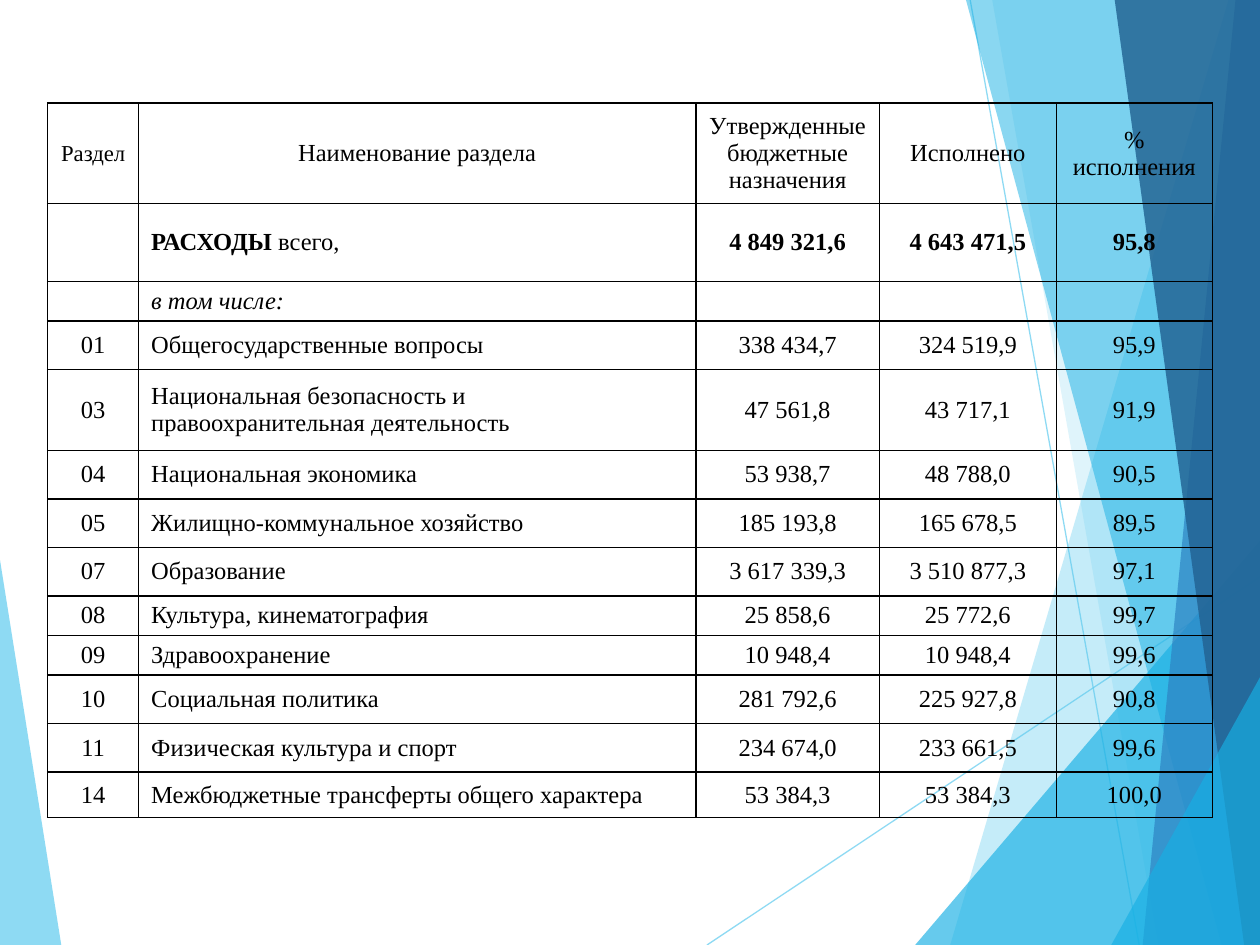
from dataclasses import dataclass

from lxml.etree import SubElement
from pptx import Presentation
from pptx.dml.color import RGBColor
from pptx.enum.shapes import MSO_CONNECTOR
from pptx.enum.text import MSO_ANCHOR, PP_ALIGN
from pptx.oxml import parse_xml
from pptx.oxml.ns import nsdecls, qn
from pptx.util import Pt


@dataclass(frozen=True)
class Theme:
    font: str = "Times New Roman"
    body: int = 14
    small: int = 13
    text: str = "000000"
    sky: str = "5FCBEF"
    cyan: str = "17B0E4"
    blue: str = "2E83C3"
    navy: str = "226292"


T = Theme()
W, H = 720, 540

# Points, colour, opacity in percent; back to front
FACETS = [
    ([(0, 320), (35.3, H), (0, H)], T.sky, 70),
    ([(702, 0), (543, H), (W, H), (W, 0)], T.sky, 36),
    ([(567.4, 0), (661.7, H), (W, H), (W, 0)], T.sky, 20),
    ([(522.7, H), (W, 309), (W, H)], T.cyan, 66),
    ([(552.2, 0), (698.4, H), (W, H), (W, 0)], T.cyan, 50),
    ([(706.3, 0), (653, H), (W, H), (W, 0)], T.blue, 70),
    ([(637.2, 0), (711.4, H), (W, H), (W, 0)], T.navy, 82),
    ([(635, H), (W, 387), (W, H)], T.cyan, 66),
]
RAYS = [((404, H), (W, 329.6)), ((554.4, 0), (651, H))]

TABLE_LEFT, TABLE_TOP = 27.2, 58.9
COLUMNS = [52, 318.4, 105, 101, 89.2]
REGULAR, LOW = 27.7, 22.5
ROWS = [
    (57.5, ["Раздел", "Наименование раздела", "Утвержденные бюджетные назначения",
            "Исполнено", "% исполнения"]),
    (44.4, ["", "РАСХОДЫ всего,", "4 849 321,6", "4 643 471,5", "95,8"]),
    (LOW, ["", "в том числе:", "", "", ""]),
    (REGULAR, ["01", "Общегосударственные вопросы", "338 434,7", "324 519,9", "95,9"]),
    (46.2, ["03", "Национальная безопасность и правоохранительная деятельность",
            "47 561,8", "43 717,1", "91,9"]),
    (REGULAR, ["04", "Национальная экономика", "53 938,7", "48 788,0", "90,5"]),
    (REGULAR, ["05", "Жилищно-коммунальное хозяйство", "185 193,8", "165 678,5", "89,5"]),
    (REGULAR, ["07", "Образование", "3 617 339,3", "3 510 877,3", "97,1"]),
    (LOW, ["08", "Культура, кинематография", "25 858,6", "25 772,6", "99,7"]),
    (LOW, ["09", "Здравоохранение", "10 948,4", "10 948,4", "99,6"]),
    (REGULAR, ["10", "Социальная политика", "281 792,6", "225 927,8", "90,8"]),
    (REGULAR, ["11", "Физическая культура и спорт", "234 674,0", "233 661,5", "99,6"]),
    (26, ["14", "Межбюджетные трансферты общего характера", "53 384,3", "53 384,3", "100,0"]),
]
HEADER, TOTAL, INCLUDING = range(3)
NAME_COLUMN = 1


def rgb(color):
    return RGBColor.from_string(color)


def set_opacity(element, percent):
    color = element.find(".//" + qn("a:srgbClr"))
    SubElement(color, qn("a:alpha")).set("val", str(percent * 1000))


def add_facet(s, points, color, opacity):
    start, *rest = points
    builder = s.shapes.build_freeform(*start, scale=Pt(1))
    builder.add_line_segments(rest, close=True)
    facet = builder.convert_to_shape()
    facet.shadow.inherit = False
    facet.fill.solid()
    facet.fill.fore_color.rgb = rgb(color)
    facet.line.fill.background()
    set_opacity(facet._element.spPr, opacity)


def add_ray(s, start, end):
    ray = s.shapes.add_connector(MSO_CONNECTOR.STRAIGHT, *map(Pt, start + end))
    ray.line.color.rgb = rgb(T.sky)
    ray.line.width = Pt(0.75)
    sp_pr = ray._element.spPr
    set_opacity(sp_pr, 70)
    SubElement(sp_pr, qn("a:effectLst"))


def set_borders(cell, width=1):
    tc_pr = cell._tc.get_or_add_tcPr()
    for position, side in enumerate(("lnL", "lnR", "lnT", "lnB")):
        tc_pr.insert(position, parse_xml(
            f'<a:{side} {nsdecls("a")} w="{Pt(width)}"><a:solidFill>'
            f'<a:srgbClr val="{T.text}"/></a:solidFill></a:{side}>'))


def format_cell(cell, row, column):
    cell.vertical_anchor = MSO_ANCHOR.MIDDLE
    cell.fill.background()
    set_borders(cell)
    p = cell.text_frame.paragraphs[0]
    is_name = column == NAME_COLUMN and row != HEADER
    p.alignment = PP_ALIGN.LEFT if is_name else PP_ALIGN.CENTER
    font = p.font
    font.name = T.font
    font.size = Pt(T.small if row == HEADER and column == 0 else T.body)
    font.color.rgb = rgb(T.text)
    font.bold = row == TOTAL and not is_name
    font.italic = row == INCLUDING


def write_cell(cell, text, row, column):
    p = cell.text_frame.paragraphs[0]
    if row == TOTAL and column == NAME_COLUMN:
        heading, rest = text.split(" ", 1)
        r = p.add_run()
        r.text = heading
        r.font.bold = True
        p.add_run().text = " " + rest
    elif text:
        p.add_run().text = text
    format_cell(cell, row, column)


def add_budget_table(s):
    heights = [height for height, _ in ROWS]
    table = s.shapes.add_table(
        len(ROWS), len(COLUMNS), Pt(TABLE_LEFT), Pt(TABLE_TOP),
        Pt(sum(COLUMNS)), Pt(sum(heights))).table
    table.first_row = table.horz_banding = False
    for column, width in zip(table.columns, COLUMNS):
        column.width = Pt(width)
    for i, (height, texts) in enumerate(ROWS):
        table.rows[i].height = Pt(height)
        for j, text in enumerate(texts):
            write_cell(table.cell(i, j), text, i, j)


def main():
    prs = Presentation()
    prs.slide_width, prs.slide_height = Pt(W), Pt(H)
    s = prs.slides.add_slide(prs.slide_layouts[6])
    left_facet, *right_facets = FACETS
    add_facet(s, *left_facet)
    for ray in RAYS:
        add_ray(s, *ray)
    for facet in right_facets:
        add_facet(s, *facet)
    add_budget_table(s)
    prs.save("out.pptx")


if __name__ == "__main__":
    main()
